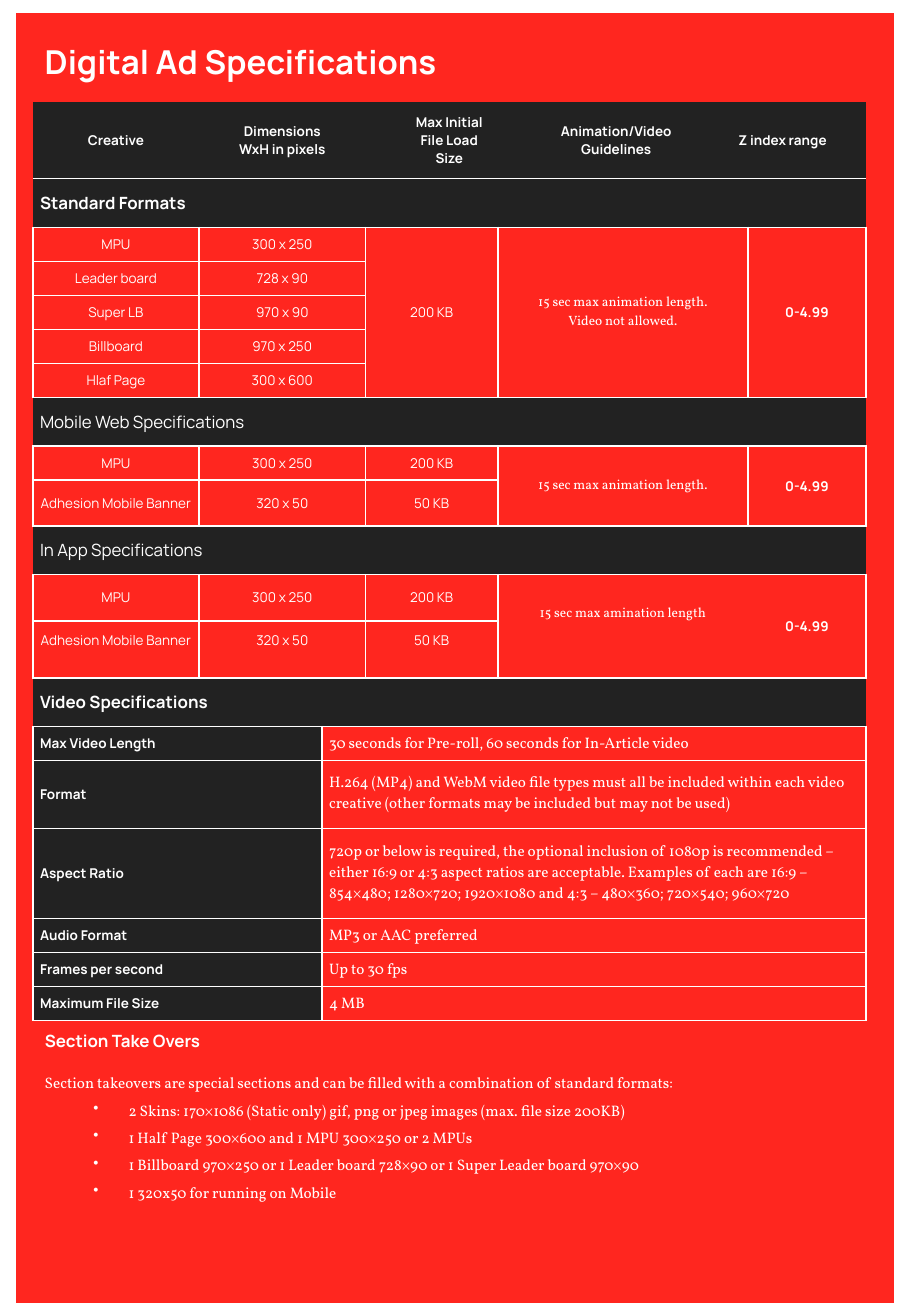
from lxml.etree import SubElement
from pptx import Presentation
from pptx.dml.color import RGBColor
from pptx.enum.shapes import MSO_SHAPE
from pptx.enum.text import MSO_ANCHOR, PP_ALIGN
from pptx.oxml.ns import qn
from pptx.util import Inches, Pt

RED = RGBColor(0xFF, 0x26, 0x1F)
DARK = RGBColor(0x22, 0x22, 0x22)
WHITE = RGBColor(0xFF, 0xFF, 0xFF)
SANS, SERIF = "Manrope", "Vollkorn"
LEFT = 0.27
INSET = 0.06

COLS = [1.37, 1.01, 0.36, 1.09, 0.29, 1.37, 0.4, 0.97]
BAND = 0.4
ROWS = [0.63, BAND, *[0.28] * 5, BAND, 0.28, 0.38, BAND, 0.38, 0.47,
        BAND, 0.28, 0.56, 0.74, *[0.28] * 3]

HEADERS = [  # text, first column, columns spanned
    ("Creative", 0, 1),
    ("Dimensions\nWxH in pixels", 1, 2),
    ("Max Initial\nFile Load\nSize", 3, 2),
    ("Animation/Video\nGuidelines", 5, 1),
    ("Z index range", 6, 2),
]
STANDARD = [
    ("MPU", "300 x 250"),
    ("Leader board", "728 x 90"),
    ("Super LB", "970 x 90"),
    ("Billboard", "970 x 250"),
    ("Hlaf Page", "300 x 600"),
]
MOBILE = [
    ("MPU", "300 x 250", "200 KB"),
    ("Adhesion Mobile Banner", "320 x 50", "50 KB"),
]
VIDEO = [
    ("Max Video Length", "30 seconds for Pre-roll, 60 seconds for In-Article video"),
    ("Format", "H.264 (MP4) and WebM video file types must all be included within "
               "each video creative (other formats may be included but may not be used)"),
    ("Aspect Ratio", "720p or below is required, the optional inclusion of 1080p is "
                     "recommended – either 16:9 or 4:3 aspect ratios are acceptable. "
                     "Examples of each are 16:9 – 854×480; 1280×720; 1920×1080 and "
                     "4:3 – 480×360; 720×540; 960×720"),
    ("Audio Format", "MP3 or AAC preferred"),
    ("Frames per second", "Up to 30 fps"),
    ("Maximum File Size", "4 MB"),
]
TAKEOVER_INTRO = ("Section takeovers are special sections and can be filled "
                  "with a combination of standard formats:")
TAKEOVERS = [
    "2 Skins: 170×1086 (Static only) gif, png or jpeg images (max. file size 200KB)",
    "1 Half Page 300×600 and 1 MPU 300×250 or 2 MPUs",
    "1 Billboard 970×250 or 1 Leader board 728×90 or 1 Super Leader board 970×90",
    "1 320x50 for running on Mobile",
]


def write(tf, text, size=8, font=SANS, bold=False, align=PP_ALIGN.LEFT, spacing=None):
    """Write each line as a paragraph and return the paragraphs."""
    paragraphs = []
    for i, line in enumerate(text.split("\n")):
        p = tf.add_paragraph() if i else tf.paragraphs[0]
        p.alignment = align
        if spacing:
            p.line_spacing = spacing
        r = p.add_run()
        r.text = line
        r.font.size, r.font.name, r.font.bold = Pt(size), font, bold
        r.font.color.rgb = WHITE
        paragraphs.append(p)
    return paragraphs


def add_bullet(p):
    pPr = p._p.get_or_add_pPr()
    pPr.set("marL", str(Inches(0.69)))
    pPr.set("indent", str(Inches(-0.29)))
    SubElement(pPr, qn("a:buChar"), char="•")


def add_text_box(s, top, width, height, text, anchor=MSO_ANCHOR.TOP, **style):
    box = s.shapes.add_textbox(Inches(LEFT), Inches(top), Inches(width), Inches(height))
    tf = box.text_frame
    tf.word_wrap = True
    tf.vertical_anchor = anchor
    return write(tf, text, **style)


def add_frame(s, prs):
    frame = s.shapes.add_shape(MSO_SHAPE.RECTANGLE, Inches(0.03), 0,
                               prs.slide_width - Inches(0.06), prs.slide_height)
    frame.shadow.inherit = False
    frame.fill.background()
    frame.line.color.rgb = WHITE
    frame.line.width = Pt(15.25)


def set_borders(cell, sides):
    tcPr = cell._tc.get_or_add_tcPr()
    for side in "LRTB":
        ln = SubElement(tcPr, qn(f"a:ln{side}"), w=str(Pt(1)))
        if side in sides:
            fill = SubElement(ln, qn("a:solidFill"))
            SubElement(fill, qn("a:srgbClr"), val=str(WHITE))
        else:
            SubElement(ln, qn("a:noFill"))


def put(table, row, col, text, rows=1, cols=1, sides="LRTB", fill=None,
        bottom=INSET, align=PP_ALIGN.CENTER, **style):
    """Fill one cell, merged over the given rows and columns."""
    for i in range(row, row + rows):
        for j in range(col, col + cols):
            part = table.cell(i, j)
            set_borders(part, sides)
            if fill is None:
                part.fill.background()
            else:
                part.fill.solid()
                part.fill.fore_color.rgb = fill
    cell = table.cell(row, col)
    if rows * cols > 1:
        cell.merge(table.cell(row + rows - 1, col + cols - 1))
    cell.vertical_anchor = MSO_ANCHOR.MIDDLE
    cell.margin_left = cell.margin_right = cell.margin_top = Inches(INSET)
    cell.margin_bottom = Inches(bottom)
    write(cell.text_frame, text, align=align, **style)


def put_band(table, row, text, bold=False):
    put(table, row, 0, text, cols=len(COLS), sides="TB", fill=DARK,
        align=PP_ALIGN.LEFT, size=10, bold=bold)


def put_formats(table, top, formats, last_bottom=INSET):
    for row, (name, pixels, *load) in enumerate(formats, top):
        is_last = row == top + len(formats) - 1
        put(table, row, 0, name, bottom=last_bottom if is_last else INSET)
        put(table, row, 1, pixels, cols=2, bottom=last_bottom if is_last else INSET)
        if load:
            put(table, row, 3, load[0], bottom=last_bottom if is_last else INSET)


def put_rules(table, top, rows, guideline, divided=True, bottom=INSET):
    put(table, top, 4, guideline, rows=rows, cols=3, font=SERIF, bottom=bottom,
        sides="LRTB" if divided else "LTB")
    put(table, top, 7, "0-4.99", rows=rows, bold=True,
        sides="LRTB" if divided else "RTB")


def add_spec_table(s):
    table = s.shapes.add_table(len(ROWS), len(COLS), Inches(LEFT), Inches(0.84),
                               Inches(sum(COLS)), Inches(sum(ROWS))).table
    table.first_row = table.horz_banding = False
    for column, width in zip(table.columns, COLS):
        column.width = Inches(width)
    for row, height in zip(table.rows, ROWS):
        row.height = Inches(height)

    # Column headings
    for text, col, cols in HEADERS:
        put(table, 0, col, text, cols=cols, sides="B", fill=DARK, bold=True)

    # Standard, mobile web and in-app formats
    put_band(table, 1, "Standard Formats", bold=True)
    put_formats(table, 2, STANDARD)
    put(table, 2, 3, "200 KB", rows=5)
    put_rules(table, 2, 5, "15 sec max animation length.\nVideo not allowed.")
    put_band(table, 7, "Mobile Web Specifications")
    put_formats(table, 8, MOBILE)
    put_rules(table, 8, 2, "15 sec max animation length.")
    put_band(table, 10, "In App Specifications")
    put_formats(table, 11, MOBILE, last_bottom=0.21)
    put_rules(table, 11, 2, "15 sec max amination length", divided=False, bottom=0.26)

    # Video
    put_band(table, 13, "Video Specifications", bold=True)
    for row, (label, value) in enumerate(VIDEO, 14):
        put(table, row, 0, label, cols=2, fill=DARK, align=PP_ALIGN.LEFT, bold=True)
        put(table, row, 2, value, cols=6, align=PP_ALIGN.LEFT, size=9, font=SERIF)


def main():
    prs = Presentation()
    prs.slide_width, prs.slide_height = Inches(7.5), Inches(10.83)
    s = prs.slides.add_slide(prs.slide_layouts[6])
    s.background.fill.solid()
    s.background.fill.fore_color.rgb = RED
    add_frame(s, prs)

    # Title and table
    add_text_box(s, 0.33, 5.4, 0.39, "Digital Ad Specifications",
                 anchor=MSO_ANCHOR.MIDDLE, size=19.5, bold=True, spacing=0.9)
    add_spec_table(s)

    # Section takeovers
    lines = add_text_box(s, 8.71, 6.46, 1.57, "\n".join([TAKEOVER_INTRO, *TAKEOVERS]),
                         size=9, font=SERIF, spacing=1.5)
    for p in lines[1:]:
        add_bullet(p)
    add_text_box(s, 8.43, 2.98, 0.4, "Section Take Overs", size=10, bold=True)
    prs.save("out.pptx")


if __name__ == "__main__":
    main()
